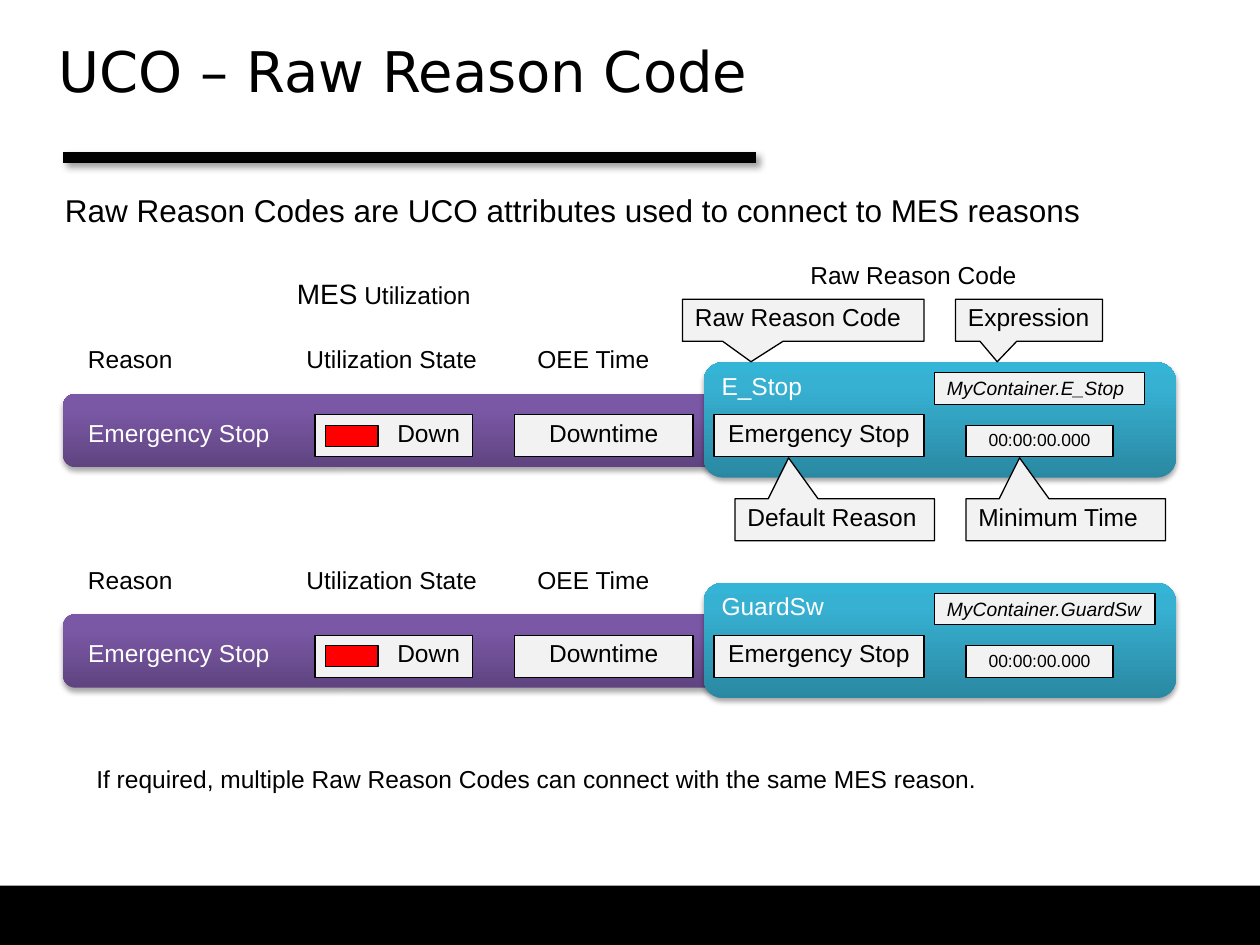
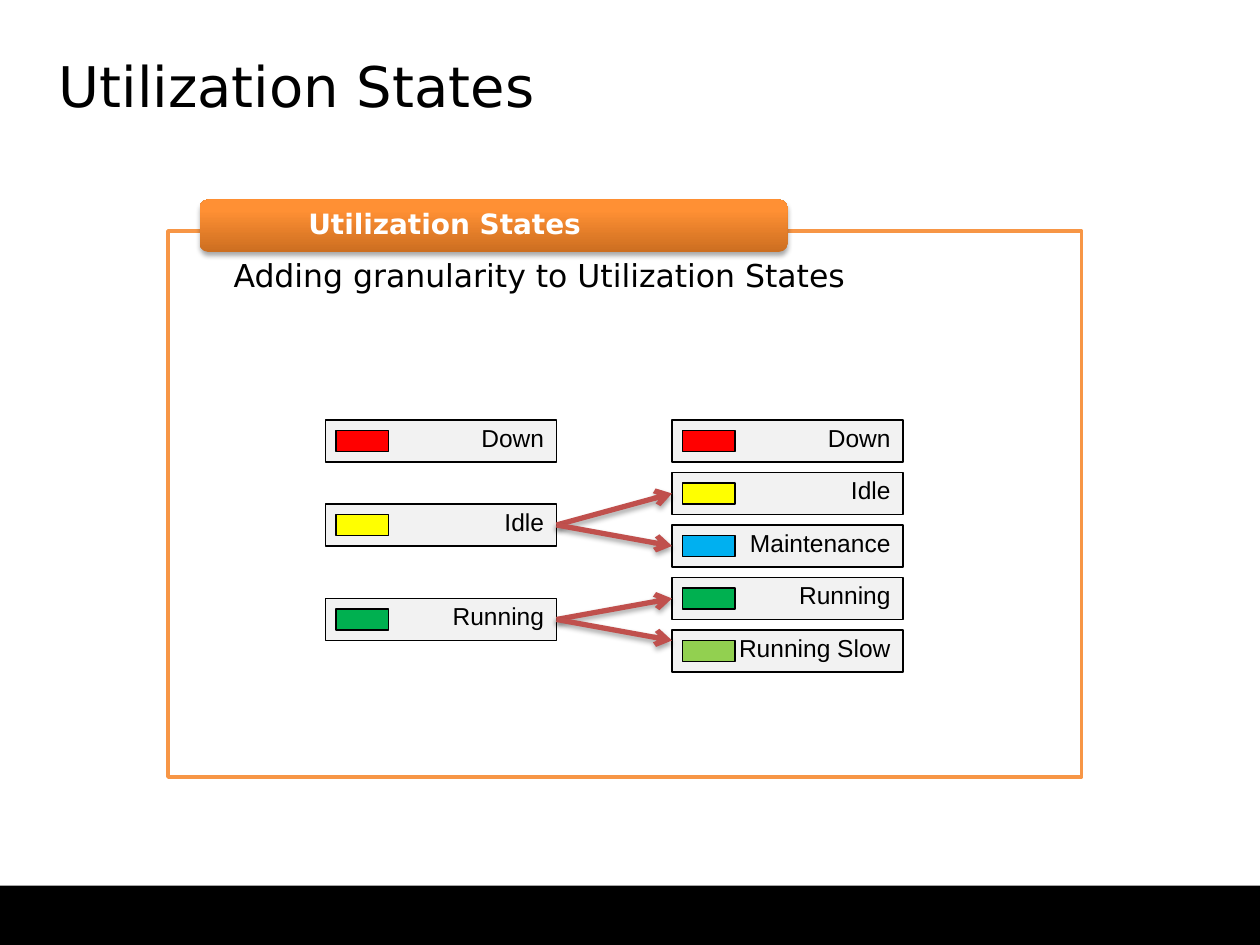
from copy import deepcopy
from lxml.etree import SubElement as sub
from pptx import Presentation
from pptx.dml.color import RGBColor
from pptx.enum.shapes import MSO_CONNECTOR as Link, MSO_SHAPE as Kind
from pptx.enum.text import MSO_ANCHOR as Anchor, MSO_AUTO_SIZE as Fit, PP_ALIGN as Align
from pptx.oxml.ns import qn
from pptx.util import Inches, Pt

# Slide grid: 120 columns by 90 rows
COLS, ROWS = 120, 90
CELL = Inches(10) / COLS

BLACK, WHITE, PALE, ORANGE, BRICK = "000000", "FFFFFF", "F2F2F2", "F79646", "C0504D"
PURPLE = ("5F4480", "7B58A6", "7C57A8")
TEAL = ("2A88A2", "37B1D2", "34B4D6")
AMBER = ("CC6E20", "FF9034", "FF9136")
STATES = {"Down": "FF0000", "Idle": "FFFF00", "Maintenance": "00B0F0",
          "Running": "00B050", "Running Slow": "92D050"}
SANS, HEAD = "Arial", "DejaVu Sans"
SOFT = (35, 3.1, 1.8, 90)  # shadow: opacity %, blur, distance, angle
DEEP = (40, 4, 3, 45)


def rgb(code):
    return RGBColor.from_string(code)


def grid(*cells):
    return [round(cell * CELL) for cell in cells]


# Text and effects

def say(shape, text, size=14, color=BLACK, align=Align.LEFT, font=SANS,
        bold=None, italic=None, gap=0.9):
    para = shape.text_frame.paragraphs[0]
    para.text = text
    para.alignment, para.line_spacing = align, gap
    face = para.font
    face.name, face.size = font, Pt(size)
    face.bold, face.italic = bold, italic
    face.color.rgb = rgb(color)
    return para


def inset(frame, left, top, right, low):
    frame.margin_left, frame.margin_right = Inches(left), Inches(right)
    frame.margin_top, frame.margin_bottom = Inches(top), Inches(low)


def shade(shape, look):
    alpha, blur, dist, angle = look
    props = shape.element.spPr
    effects = props.find(qn("a:effectLst"))
    if effects is None:
        effects = sub(props, qn("a:effectLst"))
    outer = sub(effects, qn("a:outerShdw"), blurRad=str(Pt(blur)), dist=str(Pt(dist)),
                dir=str(angle * 60000), algn="ctr", rotWithShape="0")
    tint = sub(outer, qn("a:srgbClr"), val=BLACK)
    sub(tint, qn("a:alpha"), val=str(alpha * 1000))


# Basic parts

def block(shapes, box, fill, edge=None, width=0.75, kind=Kind.RECTANGLE):
    shape = shapes.add_shape(kind, *grid(*box))
    shape.shadow.inherit = False
    shape.fill.solid()
    shape.fill.fore_color.rgb = rgb(fill)
    if edge:
        shape.line.color.rgb = rgb(edge)
        shape.line.width = Pt(width)
    else:
        shape.line.fill.background()
    shape.text_frame.vertical_anchor = Anchor.TOP
    return shape


def glossy(shapes, box, colors):
    shape = block(shapes, box, colors[0], kind=Kind.ROUNDED_RECTANGLE)
    fill = shape.fill
    fill.gradient()
    fill.gradient_angle = 90
    stops = shape.element.spPr.find(".//" + qn("a:gsLst"))
    stops.append(deepcopy(stops[-1]))
    for stop, place, color in zip(fill.gradient_stops, (0, 0.8, 1), colors):
        stop.position = place
        stop.color.rgb = rgb(color)
    shade(shape, SOFT)
    return shape


def field(shapes, box, text, kind=Kind.RECTANGLE, **style):
    shape = block(shapes, box, PALE, BLACK, kind=kind)
    say(shape, text, **style)
    return shape


def label(shapes, box, text, wrap=False, **style):
    shape = shapes.add_textbox(*grid(*box))
    shape.text_frame.word_wrap = wrap
    shape.text_frame.auto_size = Fit.SHAPE_TO_FIT_TEXT
    return say(shape, text, **style)


def state(shapes, x, y, width, name):
    group = shapes.add_group_shape().shapes
    field(group, (x, y, width, 4), name, align=Align.RIGHT)
    block(group, (x + 1, y + 1, 5, 2), STATES[name], BLACK)


def line(shapes, start, end, color, width, look, arrow=False):
    rule = shapes.add_connector(Link.STRAIGHT, *grid(*start, *end))
    rule.line.color.rgb = rgb(color)
    rule.line.width = Pt(width)
    if arrow:
        sub(rule.line._get_or_add_ln(), qn("a:tailEnd"), type="arrow")
    shade(rule, look)


# Shared slide furniture

def footer(deck, slide):
    """Draw the bottom band and move it to the master."""
    band = block(slide.shapes, (0, 84.36, COLS, ROWS - 84.36), BLACK)
    deck.slide_master.element.cSld.spTree.append(band.element)


def start(deck, text, top):
    slide = deck.slides.add_slide(deck.slide_layouts[5])
    title = slide.shapes.title
    title.left, title.top, title.width, title.height = grid(5.6, top, 108.8, 11.9)
    frame = title.text_frame
    frame.vertical_anchor, frame.auto_size = Anchor.TOP, Fit.NONE
    inset(frame, 0, 0, 0, 0)
    say(title, text, size=32, font=HEAD, gap=Pt(35))
    return slide


# Slide 1 regions

def reason(shapes, x, y, code, span):
    """One MES reason bar joined to its raw reason code card."""
    glossy(shapes, (x, y + 5, 63, 7), PURPLE)
    for left, width, text in ((1.2, 10.6, "Reason"), (22, 18.7, "Utilization State"),
                              (44, 13.2, "OEE Time")):
        label(shapes, (x + left, y, width, 3.7), text)
    label(shapes, (x + 1.2, y + 7, 19.8, 3.7), "Emergency Stop", color=WHITE)
    state(shapes, x + 24, y + 7, 15, "Down")
    field(shapes, (x + 43, y + 7, 17, 4), "Downtime", align=Align.CENTER)
    # Raw reason code card
    card = glossy(shapes, (x + 61, y + 2, 45, 11), TEAL)
    say(card, code, color=WHITE)
    field(shapes, (x + 62, y + 7, 20, 4), "Emergency Stop", align=Align.CENTER)
    field(shapes, (x + 83, y + 3, span, 3), "MyContainer." + code, size=11, italic=True)
    field(shapes, (x + 86, y + 8, 14, 3), "00:00:00.000", size=10, align=Align.CENTER)


def callouts(shapes, x, y):
    above, below = (-4, -0.216, 0.987), (15, -0.231, -1.474)
    for left, width, text, (top, across, down) in (
            (59, 23, "Raw Reason Code", above), (85, 14, "Expression", above),
            (64, 19, "Default Reason", below), (86, 19, "Minimum Time", below)):
        note = field(shapes, (x + left, y + top, width, 4), text, Kind.RECTANGULAR_CALLOUT)
        note.adjustments[0], note.adjustments[1] = across, down


def codes(deck):
    slide = start(deck, "UCO – Raw Reason Code", 4)
    shapes = slide.shapes
    reason(shapes, 6, 32.5, "E_Stop", 20)
    callouts(shapes, 6, 32.5)
    reason(shapes, 6, 53.5, "GuardSw", 21)
    # Captions
    label(shapes, (5, 18, 106, 4.4),
          "Raw Reason Codes are UCO attributes used to connect to MES reasons",
          wrap=True, size=18)
    label(shapes, (8, 72.5, 86.9, 3.7),
          "If required, multiple Raw Reason Codes can connect with the same MES reason.")
    para = label(shapes, (27.1, 26.1, 19.1, 4.1), "MES", size=16)
    rest = para.add_run()
    rest.text, rest.font.size = " Utilization", Pt(14)
    label(shapes, (76, 24.5, 25.4, 3.7), "Raw Reason Code", wrap=True)
    line(shapes, (6, 15), (72, 15), BLACK, 6, DEEP)
    return slide


# Slide 2 regions

def panel(shapes, x, y, width, height):
    """Framed panel with a tab on its top edge."""
    block(shapes, (x, y, width, height), WHITE, ORANGE, 2)
    body = shapes.add_textbox(*grid(x, y, width, 43))
    body.text_frame.word_wrap = True
    inset(body.text_frame, 0.52, 0.3, 0.52, 0.1)
    say(body, "Adding granularity to Utilization States", size=18, font=HEAD)
    group = shapes.add_group_shape().shapes
    glossy(group, (x + 3, y - 3, 56, 5), AMBER)
    name = group.add_textbox(*grid(x + 11.2, y - 2.8, 55.6, 4.6))
    frame = name.text_frame
    frame.word_wrap, frame.vertical_anchor = True, Anchor.MIDDLE
    inset(frame, 0.18, 0, 0.18, 0)
    say(name, "Utilization States", size=16, color=WHITE, font=HEAD, bold=True)


def split(shapes, x, y):
    """Basic states on the left, finer states on the right."""
    width, right = 22, x + 33
    for row, name in enumerate(STATES):
        state(shapes, right, y + 5 * row, width, name)
    for drop, name in ((0, "Down"), (8, "Idle"), (17, "Running")):
        state(shapes, x, y + drop, width, name)
    for tail, tip in ((10, 7), (10, 12), (19, 17), (19, 21)):
        line(shapes, (x + width, y + tail), (right, y + tip), BRICK, 3, SOFT, arrow=True)


def states(deck):
    slide = start(deck, "Utilization States", 5.5)
    panel(slide.shapes, 16, 22, 87, 52)
    split(slide.shapes, 31, 40)


def main():
    deck = Presentation()
    deck.slide_width, deck.slide_height = grid(COLS, ROWS)
    footer(deck, codes(deck))
    states(deck)
    deck.save("out.pptx")


if __name__ == "__main__":
    main()
